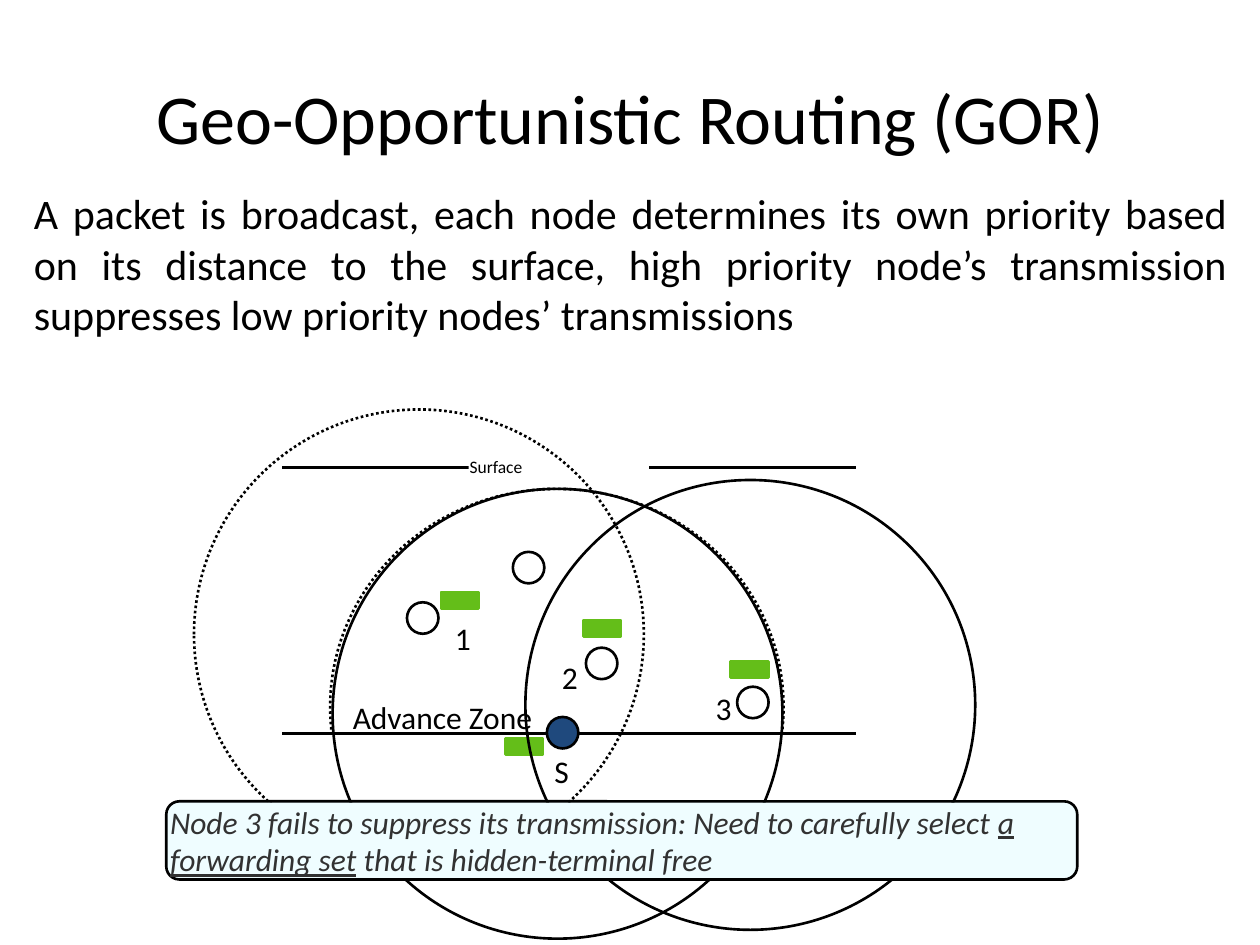
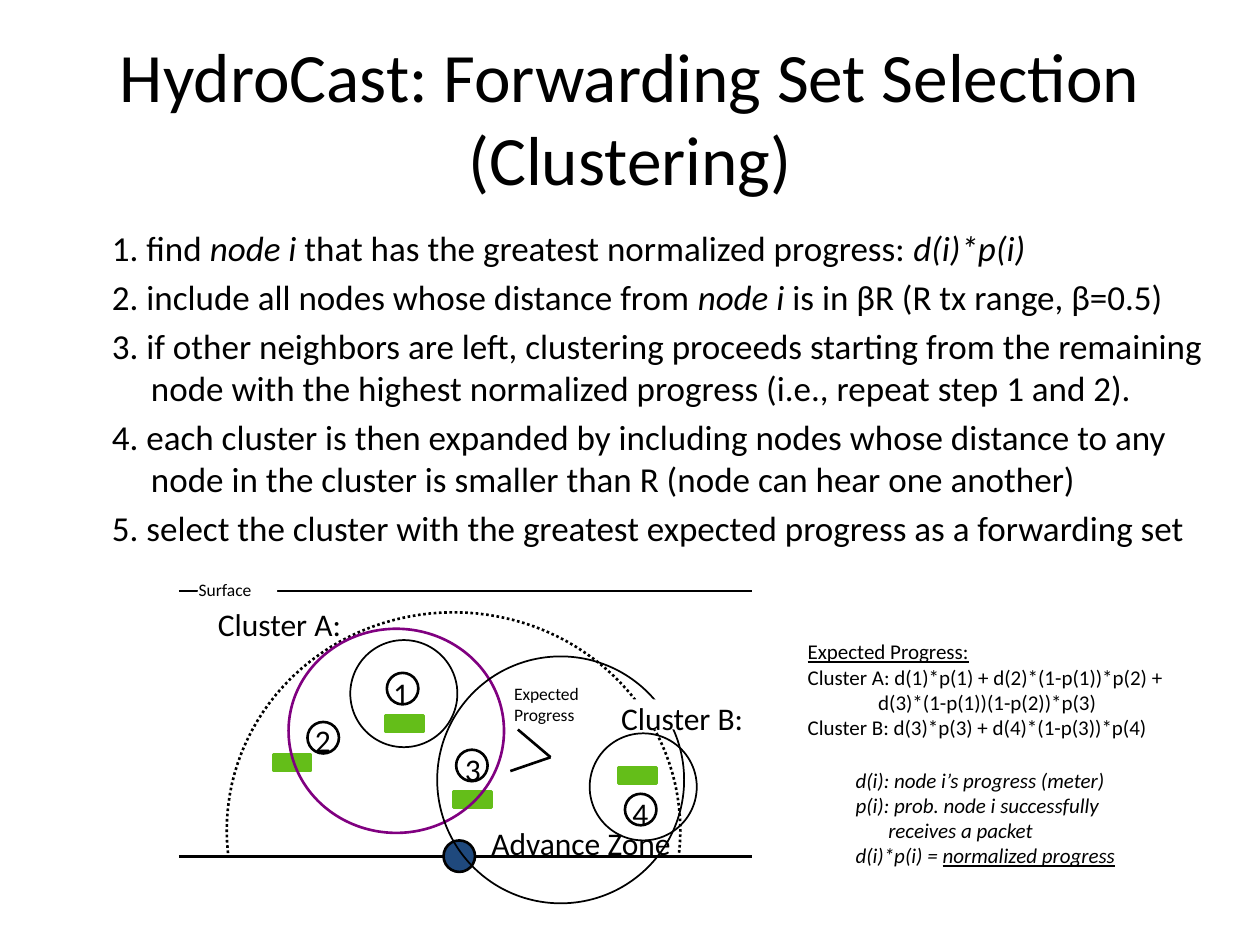
import math
from dataclasses import dataclass
from lxml import etree
from pptx import Presentation
from pptx import util as u
from pptx.dml.color import RGBColor
from pptx.enum import dml, shapes, text
from pptx.oxml.ns import qn


@dataclass(frozen=True)
class Theme:
    font: str = "Calibri"
    ink: str = "000000"
    paper: str = "FFFFFF"
    packet: str = "64BE19"
    source: str = "1F497D"
    cluster: str = "800080"
    callout: str = "D2FAFF"
    callout_ink: str = "323232"
    title: float = 40
    lead: float = 24
    steps: float = 20
    label: float = 18
    note: float = 12
    small: float = 10
    line: float = 1.5
    thin: float = 1


theme = Theme()
Kind = shapes.MSO_SHAPE
Anchor = text.MSO_ANCHOR


def paint(shape, fill=None, line=None, width=theme.line, dotted=False):
    shape.shadow.inherit = False
    if fill:
        shape.fill.solid()
        shape.fill.fore_color.rgb = RGBColor.from_string(fill)
    else:
        shape.fill.background()
    if line:
        shape.line.color.rgb = RGBColor.from_string(line)
        shape.line.width = u.Pt(width)
        if dotted:
            shape.line.dash_style = dml.MSO_LINE.ROUND_DOT
    else:
        shape.line.fill.background()
    return shape


def write(shape, paragraphs, size, inset=0.0, wrap=False, grow=True,
          color=theme.ink, align=text.PP_ALIGN.LEFT, anchor=Anchor.TOP):
    frame = shape.text_frame
    frame.margin_left = frame.margin_right = u.Inches(inset)
    frame.margin_top = frame.margin_bottom = u.Inches(inset / 2)
    frame.word_wrap = wrap
    frame.auto_size = text.MSO_AUTO_SIZE.SHAPE_TO_FIT_TEXT if grow else text.MSO_AUTO_SIZE.NONE
    frame.vertical_anchor = anchor
    for number, pieces in enumerate(paragraphs):
        paragraph = frame.add_paragraph() if number else frame.paragraphs[0]
        paragraph.alignment = align
        for words, style in pieces:
            run = paragraph.add_run()
            run.text = words
            run.font.name = theme.font
            run.font.size = u.Pt(size)
            run.font.color.rgb = RGBColor.from_string(color)
            run.font.italic = "i" in style
            run.font.underline = "u" in style
    return frame


deck = Presentation()
deck.slide_width, deck.slide_height = u.Inches(10), u.Inches(7.5)

titles = [("Geo-Opportunistic Routing (GOR)", theme.title),
          ("HydroCast: Forwarding Set Selection (Clustering)", 39.6)]
scene_shifts = [(0, 0), (-0.82, 0.98)]
surface_labels = [(3.72, 3.62, 1.43, 0.16), (1.57, 4.6, 0.63, 0.16)]
pointer_lines = [[], [(4.11, 5.79, 4.37, 6.01), (4.05, 6.12, 4.37, 6.01)]]
node_spots = [[(3.23, 4.78), (4.07, 4.38), (4.65, 5.14), (5.85, 5.45)],
              [(2.44, 5.73), (3.07, 5.34), (4.96, 6.3), (3.62, 5.95)]]
packet_spots = [[(4.01, 5.86), (3.5, 4.7), (5.8, 5.25), (4.63, 4.92)],
                [(3.06, 5.68), (4.91, 6.09), (2.17, 5.99), (3.6, 6.28)]]
diagram_labels = [
    [("S", 4.4, 5.97, 0.11), ("1", 3.61, 4.91, 0.13), ("2", 4.46, 5.22, 0.13),
     ("3", 5.68, 5.47, 0.13), ("Advance Zone", 2.8, 5.54, 1.46)],
    [("1", 3.12, 5.35, 0.13), ("2", 2.5, 5.72, 0.13), ("3", 3.69, 5.95, 0.13),
     ("4", 5.02, 6.3, 0.13), ("Advance Zone", 3.9, 6.54, 1.46),
     ("Cluster A:", 1.73, 4.8, 1.03)]]
ranges = [
    [(2.64, 3.88, 3.57, 3.57, theme.ink, theme.line, False),
     (4.17, 3.81, 3.57, 3.57, theme.ink, theme.line, False),
     (1.54, 3.25, 3.57, 3.57, theme.ink, theme.line, True)],
    [(2.78, 5.08, 0.85, 0.85, theme.ink, theme.thin, False),
     (2.29, 4.99, 1.71, 1.62, theme.cluster, theme.line, False),
     (4.68, 5.82, 0.85, 0.85, theme.ink, theme.thin, False),
     (3.47, 5.21, 1.96, 1.96, theme.ink, theme.thin, False)]]

slides = []
for index, (heading, heading_size) in enumerate(titles):
    slide = deck.slides.add_slide(deck.slide_layouts[5])
    slides.append(slide)
    title = slide.shapes.title
    title.left, title.top, title.width, title.height = map(u.Inches, (0.5, 0.3, 9, 1.25))
    write(title, [[(heading, "")]], heading_size, inset=0.1, wrap=True, grow=False,
          align=text.PP_ALIGN.CENTER, anchor=Anchor.MIDDLE)

    dx, dy = scene_shifts[index]
    rim = [(u.Inches(4.42 + dx - 1.8 * math.cos(math.radians(angle))),
            u.Inches(5.61 + dy - 1.73 * math.sin(math.radians(angle))))
           for angle in range(-6, 187, 3)]
    outline = slide.shapes.build_freeform(*rim[0])
    outline.add_line_segments(rim[1:], close=False)
    paint(outline.convert_to_shape(), line=theme.ink, dotted=True)

    levels = [(2.24 + dx, y + dy, 6.79 + dx, y + dy) for y in (5.82, 3.71)]
    for ends in levels + pointer_lines[index]:
        rule = slide.shapes.add_connector(shapes.MSO_CONNECTOR.STRAIGHT, *map(u.Inches, ends))
        rule.line.color.rgb = RGBColor.from_string(theme.ink)
        rule.line.width = u.Pt(theme.line)
        etree.SubElement(rule.line._get_or_add_ln().getparent(), qn("a:effectLst"))

    surface = slide.shapes.add_shape(Kind.ROUNDED_RECTANGLE, *map(u.Inches, surface_labels[index]))
    write(paint(surface, theme.paper), [[("Surface", "")]], theme.small, wrap=True,
          anchor=Anchor.MIDDLE)

    source_spot = (4.34 + dx, 5.69 + dy)
    for spot in [source_spot] + node_spots[index]:
        node = slide.shapes.add_shape(Kind.OVAL, *map(u.Inches, (*spot, 0.25, 0.25)))
        paint(node, theme.source if spot == source_spot else None, theme.ink)
    for spot in packet_spots[index]:
        packet = slide.shapes.add_shape(Kind.RECTANGLE, *map(u.Inches, (*spot, 0.3, 0.13)))
        paint(packet, theme.packet, theme.packet)
    for words, x, y, width in diagram_labels[index]:
        label = slide.shapes.add_textbox(*map(u.Inches, (x, y, width, 0.24)))
        write(label, [[(words, "")]], theme.label)
    for x, y, width, height, color, weight, dotted in ranges[index]:
        reach = slide.shapes.add_shape(Kind.OVAL, *map(u.Inches, (x, y, width, height)))
        paint(reach, None, color, weight, dotted)

routing, clustering = slides

backing = routing.shapes.add_shape(Kind.RECTANGLE, *map(u.Inches, (1.51, 6.37, 7.06, 0.6)))
paint(backing, theme.paper)
callout = routing.shapes.add_shape(Kind.ROUNDED_RECTANGLE, *map(u.Inches, (1.32, 6.36, 7.23, 0.62)))
paint(callout, theme.callout, theme.ink)
tint = callout.fill._xPr.find(qn("a:solidFill"))[0]
etree.SubElement(tint, qn("a:alpha"), val="35000")
write(callout, [[("Node 3 fails to suppress its transmission: Need to carefully select ", "i"),
                 ("a forwarding set", "iu"), (" that is hidden-terminal free", "i")]],
      theme.label, wrap=True, color=theme.callout_ink, anchor=Anchor.MIDDLE)

summary = routing.shapes.add_textbox(*map(u.Inches, (0.17, 1.44, 9.67, 1.31)))
write(summary, [[("A packet is broadcast, each node determines its own priority based on its "
                  "distance to the surface, high priority node’s transmission suppresses low "
                  "priority nodes’ transmissions", "")]],
      theme.lead, inset=0.1, wrap=True, align=text.PP_ALIGN.JUSTIFY)

white_labels = [(["Expected", "Progress"], (4.08, 5.42, 0.6, 0.3), theme.small),
                (["Cluster B:"], (4.93, 5.55, 1.02, 0.24), theme.label)]
for lines, box, size in white_labels:
    tag = clustering.shapes.add_shape(Kind.RECTANGLE, *map(u.Inches, box))
    write(paint(tag, theme.paper), [[(line, "")] for line in lines], size)

progress_notes = [
    ((6.41, 5.07, 3.11, 0.72), 1, 0.56,
     [[("Expected Progress:", "u")],
      [("Cluster A: d(1)*p(1) + d(2)*(1-p(1))*p(2) +", "")],
      [("d(3)*(1-p(1))(1-p(2))*p(3)", "")],
      [("Cluster B: d(3)*p(3) + d(4)*(1-p(3))*p(4)", "")]]),
    ((6.79, 6.09, 2.3, 0.72), 0, 0.26,
     [[("d(i): node i’s progress (meter)", "i")],
      [("p(i): prob. node i successfully", "i")],
      [("receives a packet", "i")],
      [("d(i)*p(i) = ", "i"), ("normalized progress", "iu")]])]
for box, _, indent, lines in progress_notes:
    note = clustering.shapes.add_textbox(*map(u.Inches, box))
    frame = write(note, lines, theme.note, wrap=True)
    frame.paragraphs[2]._p.get_or_add_pPr().set("marL", str(u.Inches(indent)))

step_texts = [
    [("1. find ", ""), ("node i", "i"),
     (" that has the greatest normalized progress: ", ""), ("d(i)*p(i)", "i")],
    [("2. include all nodes whose distance from ", ""), ("node i", "i"),
     (" is in βR (R tx range, β=0.5)", "")],
    [("3. if other neighbors are left, clustering proceeds starting from the remaining node "
      "with the highest normalized progress (i.e., repeat step 1 and 2).", "")],
    [("4. each cluster is then expanded by including nodes whose distance to any node in the "
      "cluster is smaller than R (node can hear one another)", "")],
    [("5. select the cluster with the greatest expected progress as a forwarding set", "")]]
steps = clustering.shapes.add_textbox(*map(u.Inches, (0.29, 1.75, 9.54, 3)))
frame = write(steps, step_texts, theme.steps, inset=0.1, wrap=True, grow=False)
for step in frame.paragraphs:
    step.space_before = u.Pt(4)
    properties = step._p.get_or_add_pPr()
    properties.set("marL", str(u.Inches(0.81)))
    properties.set("indent", str(u.Inches(-0.31)))

deck.save("out.pptx")
